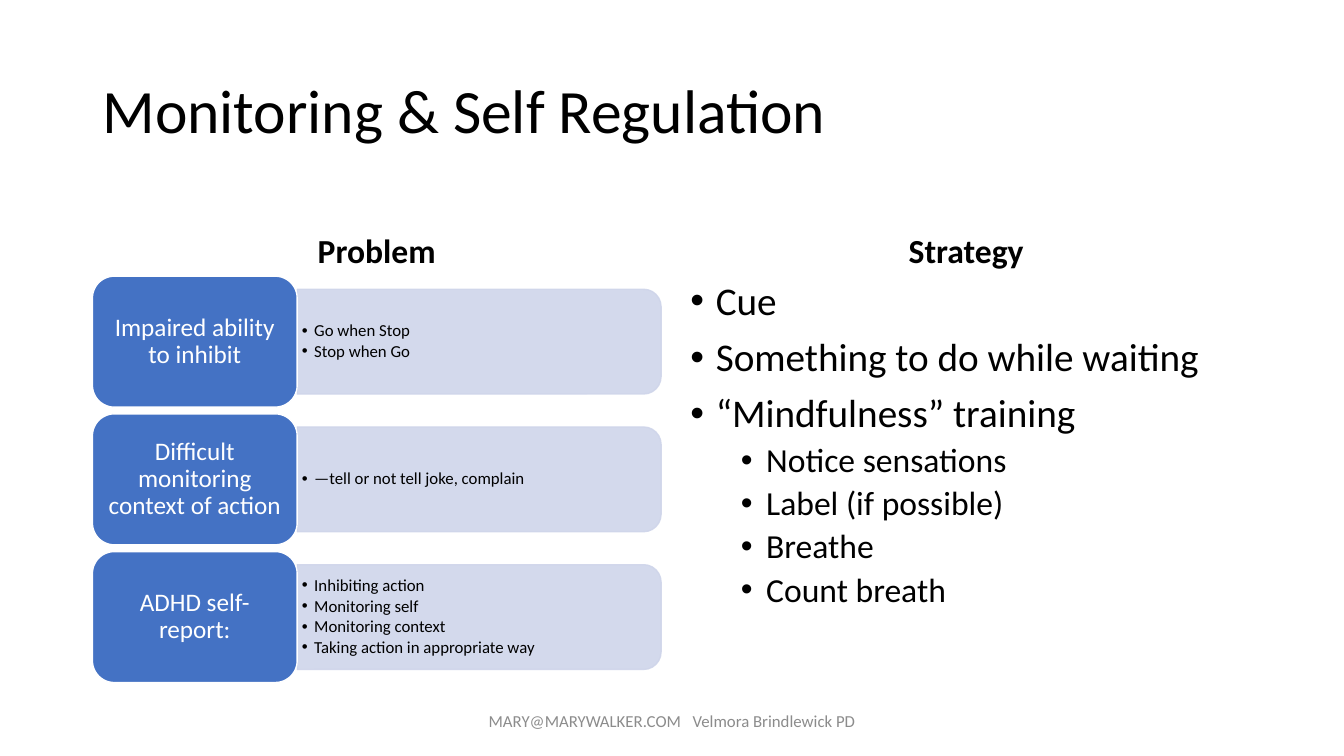
from pptx import Presentation
from pptx import util as u
from pptx.dml.color import RGBColor
from pptx.enum import shapes, text
from pptx.oxml.ns import qn
from lxml import etree

Cm, Pt = u.Cm, u.Pt
FONT = "Calibri"
BLACK = RGBColor(0, 0, 0)
WHITE = RGBColor(0xFF, 0xFF, 0xFF)
BLUE = RGBColor(0x44, 0x72, 0xC4)
PALE = RGBColor(0xCF, 0xD5, 0xEA)
GREY = RGBColor(0x8C, 0x8C, 0x8C)
CENTER, LEFT = text.PP_ALIGN.CENTER, text.PP_ALIGN.LEFT
MIDDLE = text.MSO_ANCHOR.MIDDLE

PROBLEMS = [
    ("Impaired ability to inhibit", ["Go when Stop", "Stop when Go"]),
    ("Difficult monitoring context of action", ["—tell or not tell joke, complain"]),
    ("ADHD self-report:", ["Inhibiting action", "Monitoring self", "Monitoring context",
                           "Taking action in appropriate way"]),
]
STRATEGIES = [
    ("Cue", 0), ("Something to do while waiting", 0), ("“Mindfulness” training", 0),
    ("Notice sensations", 1), ("Label (if possible)", 1), ("Breathe", 1), ("Count breath", 1),
]


def set_frame(frame, anchor, side=0.25, top=0.13):
    """Make the frame wrap, with the given anchor and margins in cm."""
    frame.word_wrap = True
    frame.auto_size = text.MSO_AUTO_SIZE.NONE
    frame.vertical_anchor = anchor
    frame.margin_left = frame.margin_right = Cm(side)
    frame.margin_top = frame.margin_bottom = Cm(top)


def format_paragraph(paragraph, size, color=BLACK, bold=False, align=LEFT, before=0, after=0):
    """Format a paragraph and its runs."""
    paragraph.alignment = align
    paragraph.line_spacing = 0.9
    paragraph.space_before, paragraph.space_after = Pt(before), Pt(after)
    for run in paragraph.runs:
        run.font.name, run.font.size, run.font.bold = FONT, Pt(size), bold
        run.font.color.rgb = color


def add_bullet(paragraph, margin, hang):
    """Give a paragraph a hanging bullet, with lengths in cm."""
    properties = paragraph._p.get_or_add_pPr()
    properties.set("marL", str(Cm(margin)))
    properties.set("indent", str(-Cm(hang)))
    etree.SubElement(properties, qn("a:buFont")).set("typeface", "Arial")
    etree.SubElement(properties, qn("a:buChar")).set("char", "•")


def paragraphs_for(frame, lines):
    """Write one paragraph for each line and return them."""
    frame.text = "\n".join(lines)
    return frame.paragraphs


def add_title(slide, left, top, width, height):
    """Place the slide title."""
    title = slide.shapes.title
    title.left, title.top, title.width, title.height = map(Cm, (left, top, width, height))
    title.text_frame.text = "Monitoring & Self Regulation"
    set_frame(title.text_frame, MIDDLE)
    format_paragraph(title.text_frame.paragraphs[0], 44)


def add_heading(slide, wording, left, top, width, height):
    """Place the bold heading of a column."""
    frame = slide.shapes.add_textbox(*map(Cm, (left, top, width, height))).text_frame
    frame.text = wording
    set_frame(frame, text.MSO_ANCHOR.BOTTOM)
    format_paragraph(frame.paragraphs[0], 24, bold=True, align=CENTER, before=10)


def add_problem(slide, label, examples, left, top, width, height):
    """Place a blue label and the pale panel of examples to its right."""
    label_width = 5.16
    panel_left, panel_width, panel_height = left + label_width, width - label_width, height * 0.8
    middle = top + height / 2

    panel = slide.shapes.add_shape(
        shapes.MSO_SHAPE.ROUND_2_SAME_RECTANGLE,
        Cm(panel_left + (panel_width - panel_height) / 2), Cm(middle - panel_width / 2),
        Cm(panel_height), Cm(panel_width))
    panel.rotation = 90
    panel.shadow.inherit = False
    for paint in (panel.fill, panel.line.fill):
        paint.solid()
        paint.fore_color.rgb = PALE
    panel.line.width = Pt(1)
    for color in panel._element.spPr.iter(qn("a:srgbClr")):
        etree.SubElement(color, qn("a:alpha")).set("val", "90000")

    text_height = 2.38
    frame = slide.shapes.add_textbox(
        Cm(panel_left), Cm(middle - text_height / 2),
        Cm(panel_width - 0.13), Cm(text_height)).text_frame
    set_frame(frame, MIDDLE, 0.12, 0.08)
    for example in paragraphs_for(frame, examples):
        example.level = 1
        add_bullet(example, 0.31, 0.31)
        format_paragraph(example, 12, after=1.8)

    tile = slide.shapes.add_shape(
        shapes.MSO_SHAPE.ROUNDED_RECTANGLE, *map(Cm, (left, top, label_width, height)))
    tile.shadow.inherit = False
    tile.fill.solid()
    tile.fill.fore_color.rgb = BLUE
    tile.line.color.rgb, tile.line.width = WHITE, Pt(1)
    tile.text_frame.text = label
    set_frame(tile.text_frame, MIDDLE, 0.18, 0.1)
    format_paragraph(tile.text_frame.paragraphs[0], 18, WHITE, align=CENTER)


def add_problems(slide, left, top, width, height):
    """Stack the problems evenly in the box."""
    row_height = 3.3
    step = (height - row_height) / (len(PROBLEMS) - 1)
    for row, (label, examples) in enumerate(PROBLEMS):
        add_problem(slide, label, examples, left, top + row * step, width, row_height)


def add_strategies(slide, left, top, width, height):
    """Place the two-level list of strategies."""
    frame = slide.shapes.add_textbox(*map(Cm, (left, top, width, height))).text_frame
    set_frame(frame, text.MSO_ANCHOR.TOP)
    lines = paragraphs_for(frame, [wording for wording, _ in STRATEGIES])
    for strategy, (_, level) in zip(lines, STRATEGIES):
        strategy.level = level
        add_bullet(strategy, 0.64 + 1.27 * level, 0.64)
        format_paragraph(strategy, 24 if level else 28, before=5 if level else 10)


def add_footer(slide, left, top, width, height):
    """Place the contact line, its two parts set apart by a widened space."""
    frame = slide.shapes.add_textbox(*map(Cm, (left, top, width, height))).text_frame
    set_frame(frame, MIDDLE)
    contact = frame.paragraphs[0]
    for part in ("MARY@MARYWALKER.COM", " ", "Velmora Brindlewick PD"):
        contact.add_run().text = part
    format_paragraph(contact, 12, GREY, align=CENTER)
    contact.line_spacing = 1.0
    contact.runs[1]._r.get_or_add_rPr().set("spc", "540")


def main():
    """Build the slide and save it."""
    deck = Presentation()
    deck.slide_width, deck.slide_height = Cm(33.87), Cm(19.05)
    slide = deck.slides.add_slide(deck.slide_layouts[5])
    add_title(slide, 2.33, 1.01, 29.21, 3.68)
    add_heading(slide, "Problem", 2.33, 4.67, 14.33, 2.29)
    add_problems(slide, 2.33, 6.96, 14.33, 10.24)
    add_heading(slide, "Strategy", 17.15, 4.67, 14.4, 2.29)
    add_strategies(slide, 17.15, 6.96, 14.4, 10.24)
    add_footer(slide, 11.22, 17.66, 11.43, 1.01)
    deck.save("out.pptx")


if __name__ == "__main__":
    main()
